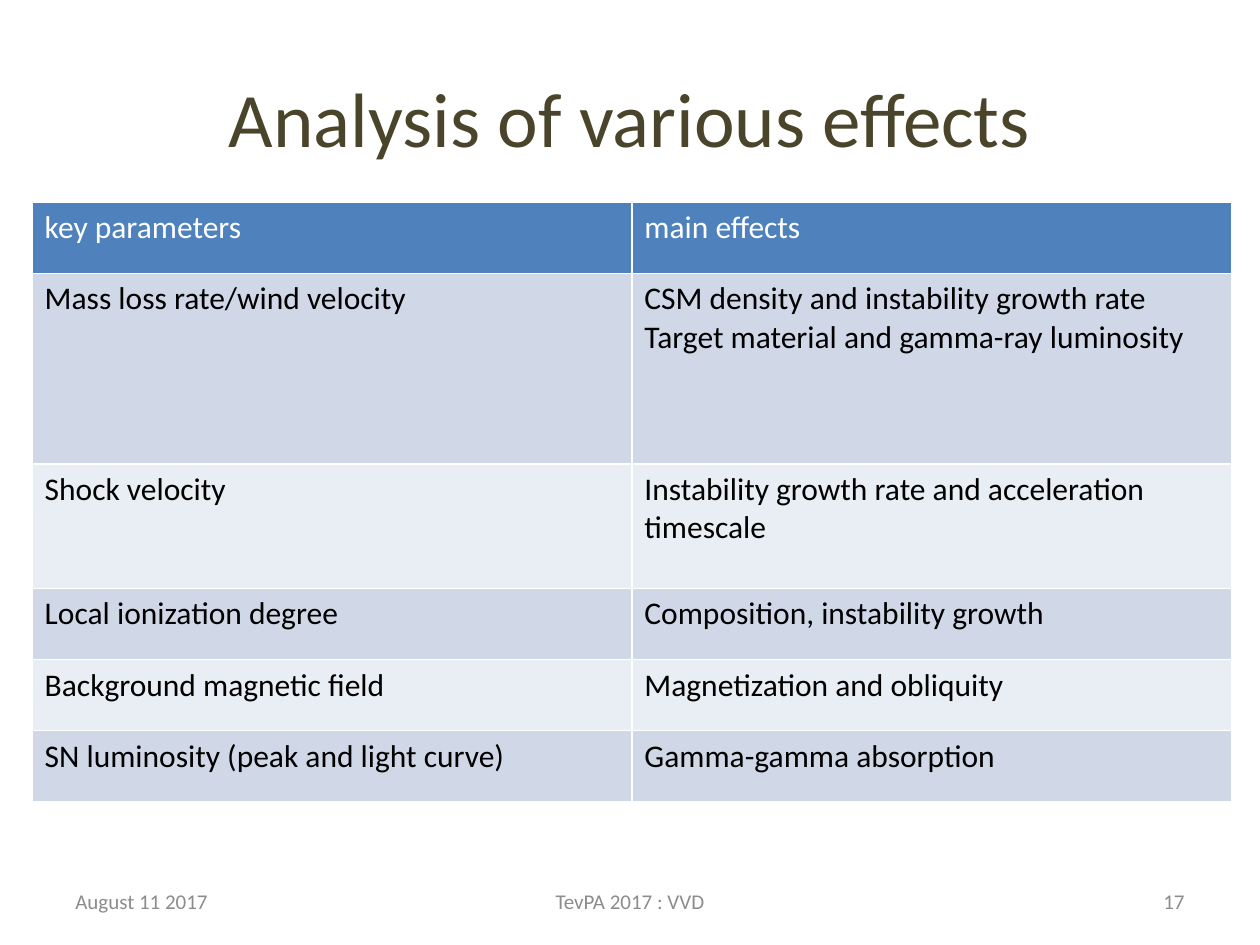
from dataclasses import dataclass

import pptx
import pptx.dml.color
import pptx.enum.text
import pptx.util

Align = pptx.enum.text.PP_ALIGN
Anchor = pptx.enum.text.MSO_ANCHOR


@dataclass(frozen=True)
class Theme:
    font: str = "Calibri"
    title_size: int = 44
    table_size: int = 18
    footer_size: int = 12
    title: str = "4A452A"
    footer: str = "8C8C8C"
    header_fill: str = "4F81BD"
    header_text: str = "FFFFFF"
    body_text: str = "000000"
    bands: tuple[str, str] = ("D0D8E8", "E9EDF4")


@dataclass(frozen=True)
class Area:
    """A place on the slide, in percent of its width and height."""
    left: float
    top: float
    width: float
    height: float

    def emu(self) -> tuple[int, int, int, int]:
        return (int(SLIDE_WIDTH * self.left / 100), int(SLIDE_HEIGHT * self.top / 100),
                int(SLIDE_WIDTH * self.width / 100), int(SLIDE_HEIGHT * self.height / 100))


@dataclass(frozen=True)
class Label:
    text: str
    area: Area
    size: int
    color: str
    align: Align


@dataclass(frozen=True)
class Effect:
    parameter: str
    effects: str
    height: float  # percent of the slide height


THEME = Theme()
SLIDE_WIDTH = pptx.util.Inches(10)
SLIDE_HEIGHT = pptx.util.Inches(7.5)

# Footer parts share one line
FOOTER_TOP, FOOTER_HEIGHT = 92.67, 5.33


def footer(text: str, left: float, width: float, align: Align) -> Label:
    return Label(text, Area(left, FOOTER_TOP, width, FOOTER_HEIGHT),
                 THEME.footer_size, THEME.footer, align)


LABELS = (
    Label("Analysis of various effects", Area(5, 4, 90, 16.67),
          THEME.title_size, THEME.title, Align.CENTER),
    footer("August 11 2017", 5, 23.33, Align.LEFT),
    footer("TevPA 2017 : VVD", 34.17, 31.67, Align.CENTER),
    footer("17", 71.67, 23.33, Align.RIGHT),
)

SINGLE_ROW = 7.52
EFFECTS = (
    Effect("key parameters", "main effects", SINGLE_ROW),
    Effect("Mass loss rate/wind velocity",
           "CSM density and instability growth rate\n"
           "Target material and gamma-ray luminosity", 20.18),
    Effect("Shock velocity", "Instability growth rate and acceleration timescale", 13.2),
    Effect("Local ionization degree", "Composition, instability growth", SINGLE_ROW),
    Effect("Background magnetic field", "Magnetization and obliquity", SINGLE_ROW),
    Effect("SN luminosity (peak and light curve)", "Gamma-gamma absorption", SINGLE_ROW),
)
TABLE_AREA = Area(2.55, 21.4, 95.2, sum(effect.height for effect in EFFECTS))


def rgb(color: str) -> pptx.dml.color.RGBColor:
    return pptx.dml.color.RGBColor.from_string(color)


def write(frame, text: str, *, size: int, color: str, align: Align = Align.LEFT) -> None:
    """Fill a text frame; each line of the text becomes a paragraph."""
    frame.text = text
    frame.word_wrap = True
    for paragraph in frame.paragraphs:
        paragraph.alignment = align
        for run in paragraph.runs:
            run.font.name = THEME.font
            run.font.size = pptx.util.Pt(size)
            run.font.bold = False
            run.font.color.rgb = rgb(color)


def draw_label(slide, label: Label) -> None:
    frame = slide.shapes.add_textbox(*label.area.emu()).text_frame
    frame.vertical_anchor = Anchor.MIDDLE
    write(frame, label.text, size=label.size, color=label.color, align=label.align)


def draw_effects(slide, effects: tuple[Effect, ...], area: Area) -> None:
    # The default table style supplies the white rules between cells
    table = slide.shapes.add_table(len(effects), 2, *area.emu()).table
    for index, effect in enumerate(effects):
        table.rows[index].height = int(SLIDE_HEIGHT * effect.height / 100)
        is_header = index == 0
        fill = THEME.header_fill if is_header else THEME.bands[(index - 1) % 2]
        color = THEME.header_text if is_header else THEME.body_text
        for column, text in enumerate((effect.parameter, effect.effects)):
            cell = table.cell(index, column)
            cell.fill.solid()
            cell.fill.fore_color.rgb = rgb(fill)
            write(cell.text_frame, text, size=THEME.table_size, color=color)


def main() -> None:
    deck = pptx.Presentation()
    deck.slide_width, deck.slide_height = SLIDE_WIDTH, SLIDE_HEIGHT
    slide = deck.slides.add_slide(deck.slide_layouts[6])

    # Title and footer
    for label in LABELS:
        draw_label(slide, label)

    # Parameters and their effects
    draw_effects(slide, EFFECTS, TABLE_AREA)

    deck.save("out.pptx")


if __name__ == "__main__":
    main()
